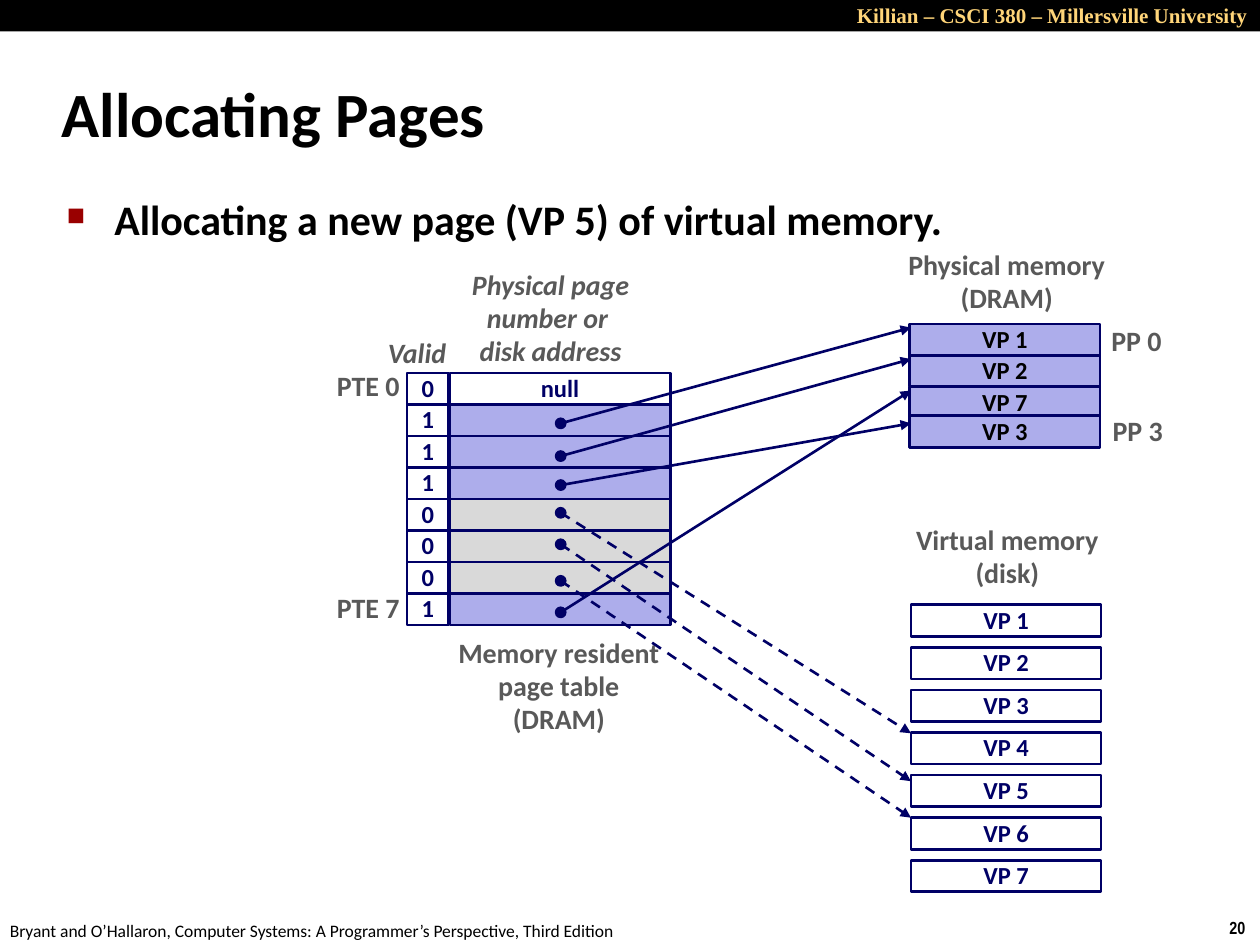
"""Build the Allocating Pages slide: page table, physical memory and virtual memory."""
from pptx import Presentation
from pptx import util as u
from pptx.dml.color import RGBColor
from pptx.enum import dml, shapes, text
from pptx.oxml.ns import qn

NAVY, GREY, BLACK, WHITE = "000066", "595959", "000000", "FFFFFF"
LILAC, SILVER = "ADADEB", "D9D9D9"
LEFT, CENTER, RIGHT = text.PP_ALIGN.LEFT, text.PP_ALIGN.CENTER, text.PP_ALIGN.RIGHT
TOP, MIDDLE = text.MSO_ANCHOR.TOP, text.MSO_ANCHOR.MIDDLE

ROW_H = 0.25
TABLE_TOP, VALID_X, VALID_W, ADDRESS_X, ADDRESS_W = 2.96, 3.23, 0.33, 3.57, 1.75
MEMORY_X, MEMORY_W = 7.23, 1.51
DISK_TOP, DISK_STEP = 4.8, 0.338
DOT_X, DOT_SIZE = 4.45, 0.08

# Each entry: valid bit, address text, fill
PAGE_TABLE = [
    ("0", "null", WHITE), ("1", "", LILAC), ("1", "", LILAC), ("1", "", LILAC),
    ("0", "", SILVER), ("0", "", SILVER), ("0", "", SILVER), ("1", "", LILAC),
]
PHYSICAL_PAGES = [("VP 1", 2.57), ("VP 2", 2.82), ("VP 7", 3.07), ("VP 3", 3.3)]
DISK_PAGES = [f"VP {n}" for n in range(1, 8)]
POINTERS = [
    (3.36, 2.6, False), (3.62, 2.85, False), (3.85, 3.36, False), (4.07, 5.82, True),
    (4.32, 6.2, True), (4.61, 6.49, True), (4.86, 3.1, False),
]
LABELS = [
    (["Memory resident", "page table", "(DRAM)"], (3.51, 5.01, 1.85, 0.89), CENTER, False),
    (["Physical memory", "(DRAM)"], (7.1, 1.93, 1.78, 0.63), CENTER, False),
    (["Virtual memory", "(disk)"], (7.15, 4.11, 1.69, 0.63), CENTER, False),
    (["Valid"], (2.98, 2.63, 0.75, 0.37), LEFT, True),
    (["Physical page", "number or ", "disk address"], (3.64, 2.09, 1.46, 0.89), CENTER, True),
    (["PTE 0"], (2.57, 2.89, 0.7, 0.37), RIGHT, False),
    (["PTE 7"], (2.57, 4.65, 0.7, 0.37), RIGHT, False),
    (["PP 0"], (8.72, 2.53, 0.6, 0.37), CENTER, False),
    (["PP 3"], (8.73, 3.25, 0.6, 0.37), CENTER, False),
]


def rgb(value):
    """Turn a hex string into a colour."""
    return RGBColor.from_string(value)


def write(sp, lines, size, color, align=LEFT, anchor=TOP, bold=True, italic=False,
          font="Calibri", spacing=None, wrap=False):
    """Fill a shape with paragraphs of one style."""
    tf = sp.text_frame
    tf.word_wrap = wrap
    tf.vertical_anchor = anchor
    for i, line in enumerate(lines):
        p = tf.paragraphs[0] if i == 0 else tf.add_paragraph()
        p.alignment = align
        p.line_spacing = spacing
        r = p.add_run()
        r.text = line
        r.font.name, r.font.size = font, u.Pt(size)
        r.font.bold, r.font.italic = bold, italic
        r.font.color.rgb = rgb(color)
    return tf


def add_text(s, lines, box, size, color, **style):
    """Add a text box."""
    return write(s.shapes.add_textbox(*map(u.Inches, box)), lines, size, color, **style)


def add_shape(s, kind, box, fill, line=NAVY, width=1.5):
    """Add a preset shape with flat fill and outline."""
    sp = s.shapes.add_shape(kind, *map(u.Inches, box))
    sp.shadow.inherit = False
    sp.fill.solid()
    sp.fill.fore_color.rgb = rgb(fill)
    sp.line.color.rgb = rgb(line)
    sp.line.width = u.Pt(width)
    return sp


def add_cell(s, label, box, fill, color=NAVY):
    """Add one outlined memory cell."""
    sp = add_shape(s, shapes.MSO_SHAPE.RECTANGLE, box, fill)
    if label:
        write(sp, [label], 14, color, align=CENTER, anchor=MIDDLE, spacing=0.98)


def add_pointer(s, start_y, end_y, dashed):
    """Add a dot and the arrow that leaves it."""
    ends = map(u.Inches, (DOT_X, start_y, MEMORY_X, end_y))
    c = s.shapes.add_connector(shapes.MSO_CONNECTOR.STRAIGHT, *ends)
    c.line.color.rgb = rgb(NAVY)
    c.line.width = u.Pt(1.5)
    if dashed:
        c.line.dash_style = dml.MSO_LINE.DASH
    ln = c.line._get_or_add_ln()
    ln.append(ln.makeelement(qn("a:tailEnd"), {"type": "triangle"}))
    pr = c._element.spPr
    pr.append(pr.makeelement(qn("a:effectLst"), {}))
    dot = (DOT_X - DOT_SIZE / 2, start_y - DOT_SIZE / 2, DOT_SIZE, DOT_SIZE)
    add_shape(s, shapes.MSO_SHAPE.OVAL, dot, NAVY, width=1)


def add_bullet(p):
    """Give a paragraph a small red square bullet."""
    pr = p._p.get_or_add_pPr()
    pr.set("marL", str(u.Inches(0.38)))
    pr.set("indent", str(-u.Inches(0.38)))
    color = pr.makeelement(qn("a:buClr"), {})
    color.append(color.makeelement(qn("a:srgbClr"), {"val": "990000"}))
    pr.append(color)
    pr.append(pr.makeelement(qn("a:buSzPct"), {"val": "60000"}))
    pr.append(pr.makeelement(qn("a:buChar"), {"char": "■"}))


def main():
    """Lay out the slide and save it."""
    prs = Presentation()
    prs.slide_width, prs.slide_height = u.Inches(10), u.Inches(7.5)
    s = prs.slides.add_slide(prs.slide_layouts[6])

    bar = add_shape(s, shapes.MSO_SHAPE.RECTANGLE, (0, 0, 10, 0.25), BLACK)
    bar.line.fill.background()
    add_text(s, ["Killian – CSCI 380 – Millersville University"], (6.69, -0.03, 3.31, 0.3),
             12, "FFD579", align=RIGHT, font="Times New Roman", wrap=True)
    add_text(s, ["20"], (9.66, 7.23, 0.34, 0.27), 10, BLACK, font="Arial Narrow")
    add_text(s, ["Bryant and O’Hallaron, Computer Systems: A Programmer’s Perspective, "
                 "Third Edition"], (-0.02, 7.25, 5.08, 0.27), 10, BLACK, bold=False)
    add_text(s, ["Allocating Pages"], (0.39, 0.48, 8.3, 0.83), 36, BLACK,
             anchor=MIDDLE, wrap=True)
    tf = add_text(s, ["Allocating a new page (VP 5) of virtual memory."],
                  (0.43, 1.49, 8.64, 0.55), 24, BLACK, wrap=True)
    add_bullet(tf.paragraphs[0])

    for i, (valid, address, fill) in enumerate(PAGE_TABLE):
        y = TABLE_TOP + i * ROW_H
        add_cell(s, address, (ADDRESS_X, y, ADDRESS_W, ROW_H), fill)
        add_cell(s, valid, (VALID_X, y, VALID_W, ROW_H), WHITE)
    for label, y in PHYSICAL_PAGES:
        add_cell(s, label, (MEMORY_X - 0.01, y, MEMORY_W, ROW_H), LILAC, BLACK)
    for i, label in enumerate(DISK_PAGES):
        add_cell(s, label, (MEMORY_X, DISK_TOP + i * DISK_STEP, MEMORY_W, ROW_H), WHITE)
    for lines, box, align, italic in LABELS:
        add_text(s, lines, box, 16, GREY, align=align, italic=italic, spacing=0.98)
    for pointer in POINTERS:
        add_pointer(s, *pointer)

    prs.save("out.pptx")


if __name__ == "__main__":
    main()
